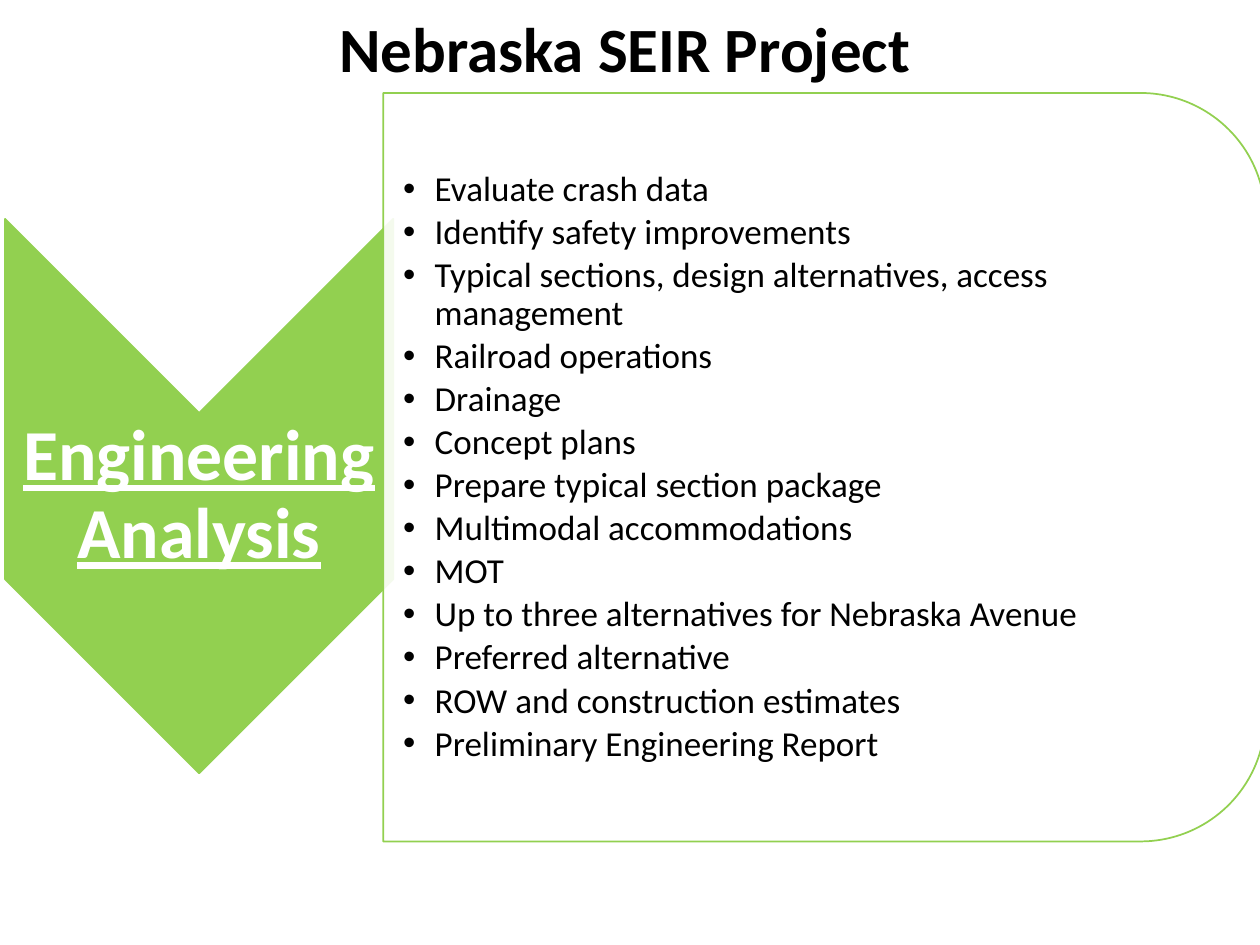
"""Build the Engineering Analysis slide of the Nebraska SEIR Project."""
from lxml import etree
from pptx import Presentation
from pptx.dml.color import RGBColor
from pptx.enum.shapes import MSO_SHAPE
from pptx.enum.text import MSO_ANCHOR, PP_ALIGN
from pptx.oxml.ns import qn
from pptx.util import Pt

CHEVRON, PANEL = MSO_SHAPE.CHEVRON, MSO_SHAPE.ROUND_2_SAME_RECTANGLE
MIDDLE, CENTER = MSO_ANCHOR.MIDDLE, PP_ALIGN.CENTER

TITLE = "Nebraska SEIR Project"
PHASE = "Engineering Analysis"
TASKS = [
    "Evaluate crash data",
    "Identify safety improvements",
    "Typical sections, design alternatives, access management",
    "Railroad operations",
    "Drainage",
    "Concept plans",
    "Prepare typical section package",
    "Multimodal accommodations",
    "MOT",
    "Up to three alternatives for Nebraska Avenue",
    "Preferred alternative",
    "ROW and construction estimates",
    "Preliminary Engineering Report",
]
COLORS = {"green": "92D050", "white": "FFFFFF", "black": "000000"}
FONT = "Calibri"
INDENT = 18


def color(name):
    return RGBColor.from_string(COLORS[name])


def add_turned_shape(slide, preset, center, length, breadth, fill):
    """Add a preset shape turned a quarter clockwise about its center."""
    x, y = center
    shape = slide.shapes.add_shape(
        preset, Pt(x - length / 2), Pt(y - breadth / 2), Pt(length), Pt(breadth))
    shape.rotation = 90
    shape.shadow.inherit = False
    shape.fill.solid()
    shape.fill.fore_color.rgb = color(fill)
    shape.line.color.rgb = color("green")
    shape.line.width = Pt(1)
    return shape


def add_text_area(slide, box, insets):
    frame = slide.shapes.add_textbox(*map(Pt, box)).text_frame
    frame.word_wrap = True
    frame.vertical_anchor = MIDDLE
    (frame.margin_left, frame.margin_top,
     frame.margin_right, frame.margin_bottom) = map(Pt, insets)
    return frame


def style(paragraph, size, ink, space_after, bold=False, underline=None):
    paragraph.line_spacing = 0.9
    paragraph.space_before = Pt(0)
    paragraph.space_after = Pt(space_after)
    font = paragraph.font
    font.name, font.size, font.bold, font.underline = FONT, Pt(size), bold, underline
    font.color.rgb = color(ink)


def add_bullet(paragraph):
    properties = paragraph._p.get_or_add_pPr()
    properties.set("marL", str(Pt(INDENT)))
    properties.set("indent", str(Pt(-INDENT)))
    etree.SubElement(properties, qn("a:buFont")).set("typeface", "Arial")
    etree.SubElement(properties, qn("a:buChar")).set("char", "•")


def main():
    deck = Presentation()
    deck.slide_width, deck.slide_height = Pt(720), Pt(540)
    slide = deck.slides.add_slide(deck.slide_layouts[5])

    add_turned_shape(slide, CHEVRON, (113.8, 283.5), 316.8, 221.8, "green")
    phase_frame = add_text_area(slide, (2.9, 236.2, 221.8, 95), (2.2,) * 4)
    phase_frame.text = PHASE
    phase = phase_frame.paragraphs[0]
    phase.alignment = CENTER
    style(phase, 41, "white", 14.35, bold=True, underline=True)

    panel = add_turned_shape(slide, PANEL, (471, 267), 427.7, 504, "white")
    panel_fill = panel._element.spPr.find(qn("a:solidFill"))
    etree.SubElement(panel_fill[0], qn("a:alpha")).set("val", "90000")

    task_frame = add_text_area(slide, (218.9, 74.2, 483.1, 385.9), (11.5, 0.7, 0.7, 0.7))
    task_frame.text = "\n".join(TASKS)
    for task in task_frame.paragraphs:
        task.level = 1
        add_bullet(task)
        style(task, 20, "black", 3)

    title = slide.shapes.title
    title.left, title.top, title.width, title.height = map(Pt, (102.2, -36, 509.8, 131.8))
    title.text_frame.text = TITLE
    title.text_frame.vertical_anchor = MIDDLE
    heading = title.text_frame.paragraphs[0]
    heading.alignment = CENTER
    style(heading, 36, "black", 6, bold=True)

    deck.save("out.pptx")


if __name__ == "__main__":
    main()
